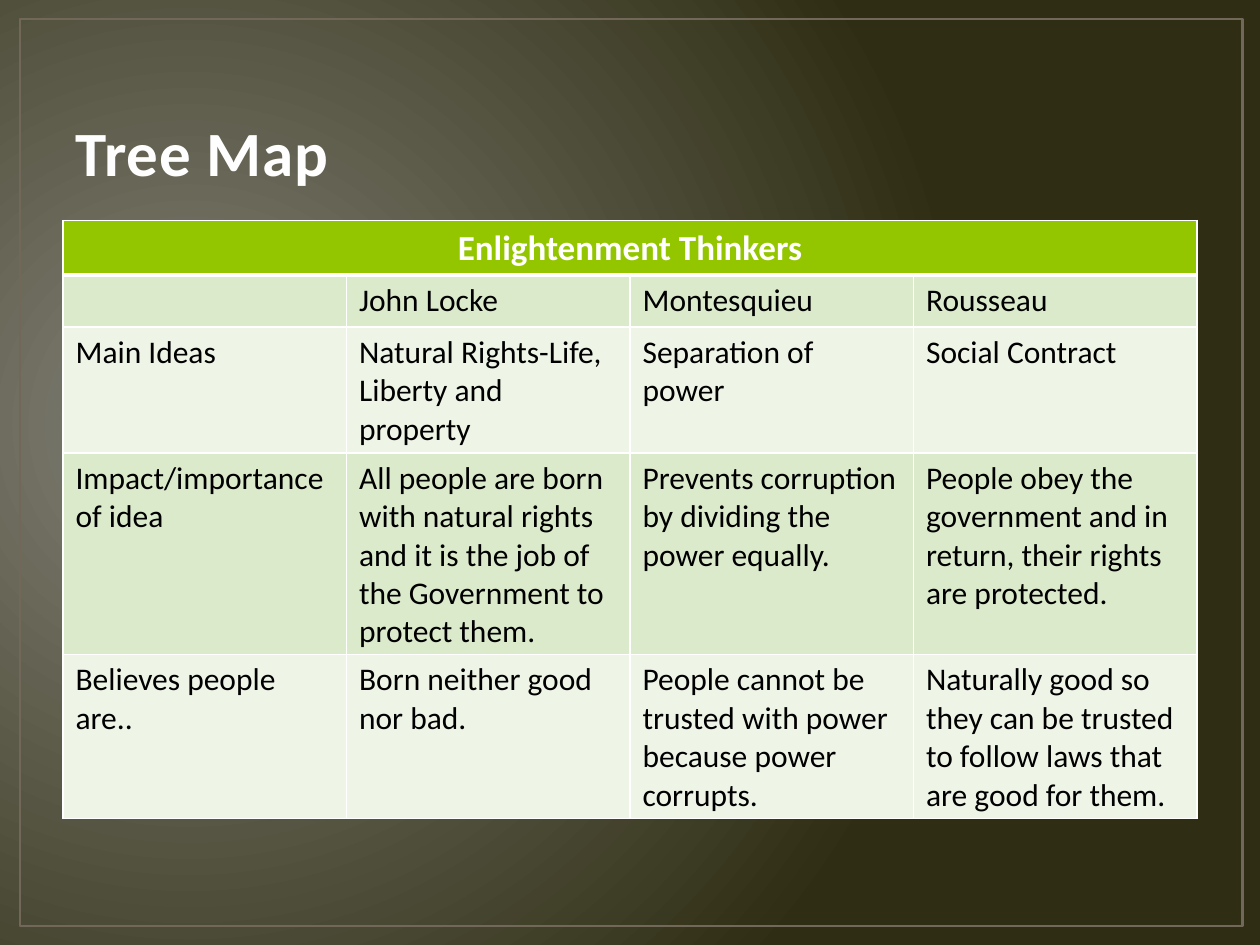
from dataclasses import dataclass

from lxml.etree import SubElement
from pptx import Presentation
from pptx.dml.color import RGBColor
from pptx.enum.shapes import MSO_SHAPE
from pptx.enum.text import MSO_ANCHOR, PP_ALIGN
from pptx.oxml import parse_xml
from pptx.oxml.ns import qn
from pptx.util import Inches, Pt

NAMESPACE = 'xmlns:a="http://schemas.openxmlformats.org/drawingml/2006/main"'
FONT = "Calibri"
ROW_HEIGHT = 0.41
BANDS = ("DCEACC", "EEF5E7")
HEADING = "Enlightenment Thinkers"
THINKER_ROWS = (
    ("", "John Locke", "Montesquieu", "Rousseau"),
    ("Main Ideas", "Natural Rights-Life, Liberty and property",
     "Separation of power", "Social Contract"),
    ("Impact/importance of idea",
     "All people are born with natural rights and it is the job of the Government to protect them.",
     "Prevents corruption by dividing the power equally.",
     "People obey the government and in return, their rights are protected."),
    ("Believes people are..", "Born neither good nor bad.",
     "People cannot be trusted with power because power corrupts.",
     "Naturally good so they can be trusted to follow laws that are good for them."),
)


@dataclass(frozen=True)
class TextStyle:
    size: float
    color: str
    bold: bool = False
    align: PP_ALIGN = PP_ALIGN.LEFT


TITLE = TextStyle(36, "FFFEFE", bold=True)
HEADER = TextStyle(20, "FFFFFF", bold=True, align=PP_ALIGN.CENTER)
BODY = TextStyle(18, "000000")


def rgb(color: str) -> RGBColor:
    return RGBColor.from_string(color)


def write_text(text_frame, text: str, style: TextStyle):
    paragraph = text_frame.paragraphs[0]
    paragraph.alignment = style.align
    run = paragraph.add_run()
    run.text = text
    font_format = {"name": FONT, "size": Pt(style.size), "bold": style.bold}
    for name, value in font_format.items():
        setattr(run.font, name, value)
    run.font.color.rgb = rgb(style.color)
    return run


def set_background(slide) -> None:
    fill = slide.background.fill
    fill.gradient()
    for stop, color, position in zip(fill.gradient_stops, ("818076", "2F2E14"), (0, 1)):
        stop.color.rgb = rgb(color)
        stop.position = position
    gradient = slide.background._cSld.find(".//" + qn("a:gradFill"))
    circle = parse_xml(
        f'<a:path {NAMESPACE} path="circle">'
        '<a:fillToRect l="15000" t="50000" r="85000" b="60000"/></a:path>')
    gradient.replace(gradient.find(qn("a:lin")), circle)


def add_frame(slide) -> None:
    frame = slide.shapes.add_shape(
        MSO_SHAPE.RECTANGLE, Inches(0.16), Inches(0.15), Inches(9.7), Inches(7.2))
    frame.shadow.inherit = False
    frame.fill.background()
    frame.line.color.rgb = rgb("71685A")
    frame.line.width = Pt(1.5)


def add_title(slide, text: str) -> None:
    box = slide.shapes.add_textbox(Inches(0.5), Inches(0.3), Inches(9), Inches(1.25))
    box.text_frame.word_wrap = True
    box.text_frame.vertical_anchor = MSO_ANCHOR.BOTTOM
    properties = write_text(box.text_frame, text, TITLE).font._element
    properties.set("spc", "50")
    properties.insert(0, parse_xml(
        f'<a:ln {NAMESPACE} w="{Pt(1.05)}"><a:solidFill>'
        '<a:srgbClr val="4A6300"/></a:solidFill></a:ln>'))


def style_cell(cell, fill: str, top: float = 1, bottom: float = 1) -> None:
    """Give the cell white borders, in points, and a solid fill."""
    properties = cell._tc.get_or_add_tcPr()
    for side, width in {"L": 1, "R": 1, "T": top, "B": bottom}.items():
        line = SubElement(properties, qn(f"a:ln{side}"), w=str(Pt(width)))
        SubElement(SubElement(line, qn("a:solidFill")), qn("a:srgbClr"), val="FFFFFF")
    cell.fill.solid()
    cell.fill.fore_color.rgb = rgb(fill)


def add_thinkers_table(slide) -> None:
    row_count, column_count = len(THINKER_ROWS) + 1, len(THINKER_ROWS[0])
    table = slide.shapes.add_table(
        row_count, column_count, Inches(0.5), Inches(1.75),
        Inches(9), Inches(ROW_HEIGHT * row_count)).table
    for row in table.rows:
        row.height = Inches(ROW_HEIGHT)
    for column in range(column_count):
        style_cell(table.cell(0, column), "94C600", bottom=3)
    table.cell(0, 0).merge(table.cell(0, column_count - 1))
    write_text(table.cell(0, 0).text_frame, HEADING, HEADER)
    for row_index, texts in enumerate(THINKER_ROWS, start=1):
        for column, text in enumerate(texts):
            cell = table.cell(row_index, column)
            style_cell(cell, BANDS[(row_index - 1) % 2], top=3 if row_index == 1 else 1)
            if text:
                write_text(cell.text_frame, text, BODY)


def main() -> None:
    presentation = Presentation()
    presentation.slide_width = Inches(10)
    presentation.slide_height = Inches(7.5)
    slide = presentation.slides.add_slide(presentation.slide_layouts[6])
    set_background(slide)
    add_frame(slide)
    add_title(slide, "Tree Map")
    add_thinkers_table(slide)
    presentation.save("out.pptx")


if __name__ == "__main__":
    main()
